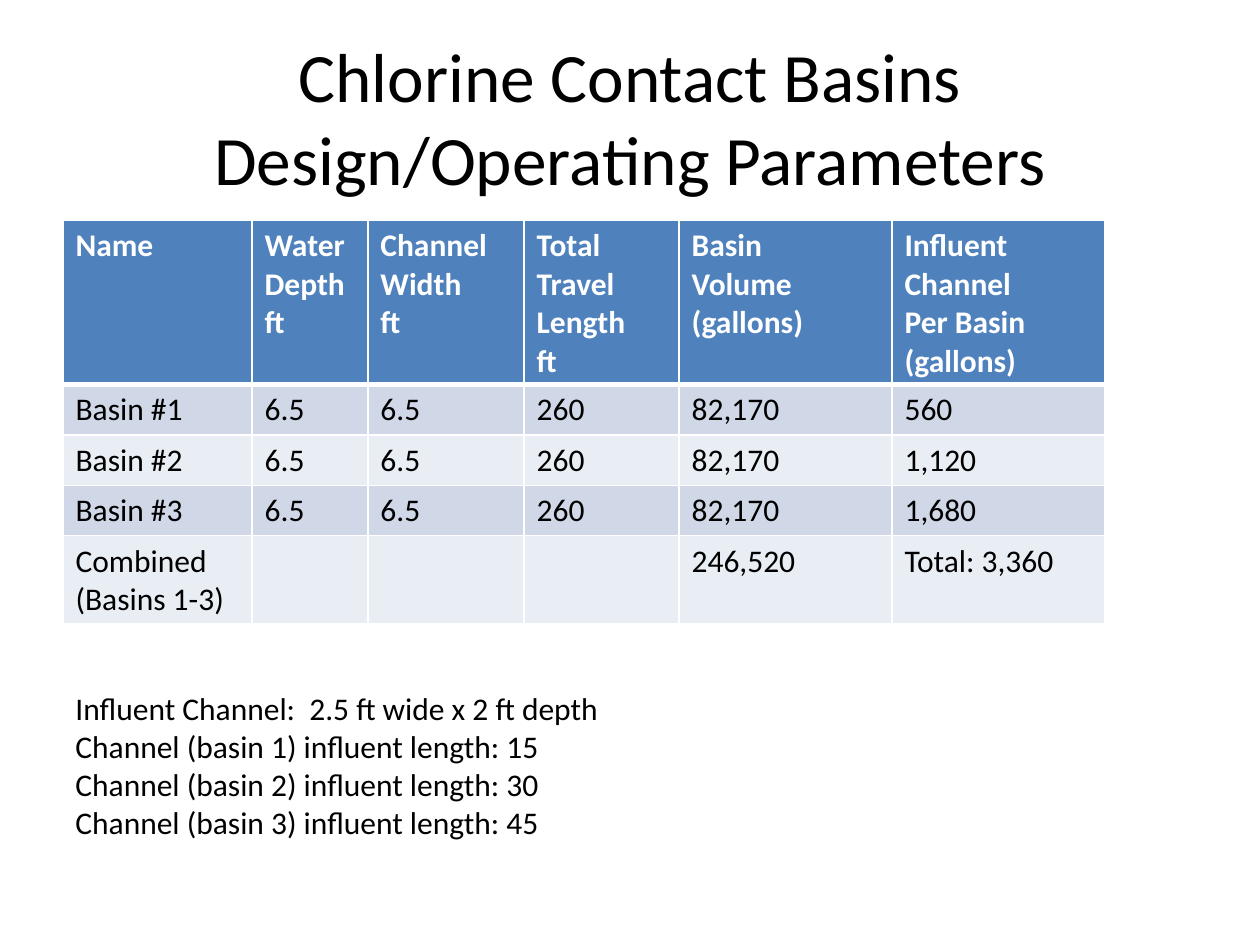
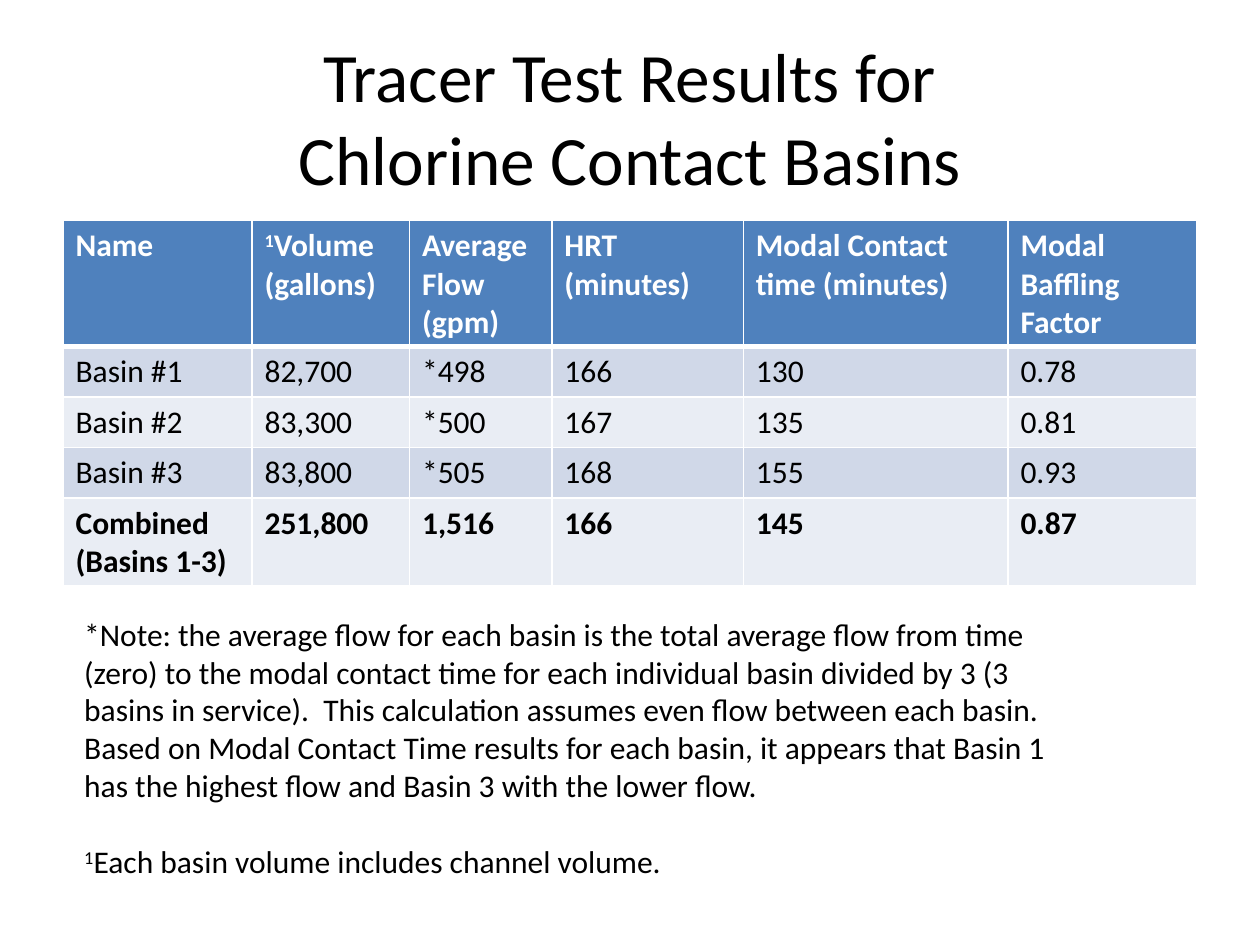
from dataclasses import dataclass

import lxml.etree
import pptx
import pptx.dml.color
import pptx.enum.text
import pptx.oxml.ns
import pptx.util

CELL = pptx.util.Inches(0.25)  # the slide is a grid of square cells
COLS, ROWS = 40, 30


@dataclass(frozen=True)
class Theme:
    font: str = "Calibri"
    title_size: float = 39.6
    body_size: float = 18
    note_gap: float = 22
    ink: str = "000000"
    paper: str = "FFFFFF"
    header: str = "4F81BD"
    bands: tuple = ("D0D8E8", "E9EDF4")
    rule: float = 1
    header_rule: float = 3


THEME = Theme()
TITLE_BOX = (2, 1.2, 36, 5)
TABLE_ORIGIN = (2, 7)
ROW_HEIGHT = 1.6
SUPERSCRIPTS = {"¹": "1"}


def grid(*lengths):
    """Turn grid lengths into slide units."""
    return [int(n * CELL) for n in lengths]


def rgb(value):
    return pptx.dml.color.RGBColor.from_string(value)


def write_paragraph(p, text, size=THEME.body_size, color=THEME.ink, bold=False):
    """Fill one paragraph; a leading superscript mark becomes a raised run."""
    mark = SUPERSCRIPTS.get(text[:1])
    if mark:
        p.text = mark
        p.runs[0].font._element.set("baseline", "30000")
        p.add_run().text = text[1:]
    else:
        p.text = text
    for r in p.runs:
        r.font.name = THEME.font
        r.font.size = pptx.util.Pt(size)
        r.font.bold = bold
        r.font.color.rgb = rgb(color)


def write_lines(tf, text, **style):
    """Write each line of the text as a paragraph."""
    for i, line in enumerate(text.split("\n")):
        p = tf.add_paragraph() if i else tf.paragraphs[0]
        write_paragraph(p, line, **style)


def add_text_frame(slide, box):
    tf = slide.shapes.add_textbox(*grid(*box)).text_frame
    tf.word_wrap = True
    return tf


def add_title(slide, text):
    tf = add_text_frame(slide, TITLE_BOX)
    tf.vertical_anchor = pptx.enum.text.MSO_ANCHOR.MIDDLE
    p = tf.paragraphs[0]
    write_paragraph(p, text, size=THEME.title_size)
    p.alignment = pptx.enum.text.PP_ALIGN.CENTER


def add_notes_box(slide, box, text, gap=0):
    tf = add_text_frame(slide, box)
    tf.auto_size = pptx.enum.text.MSO_AUTO_SIZE.SHAPE_TO_FIT_TEXT
    write_lines(tf, text)
    for p in tf.paragraphs[1:]:
        p.space_before = pptx.util.Pt(gap)


def set_borders(cell, top, bottom):
    tc_pr = cell._tc.get_or_add_tcPr()
    qn = pptx.oxml.ns.qn
    widths = {"L": THEME.rule, "R": THEME.rule, "T": top, "B": bottom}
    for side, width in widths.items():
        ln = lxml.etree.SubElement(tc_pr, qn(f"a:ln{side}"), w=str(pptx.util.Pt(width)))
        fill = lxml.etree.SubElement(ln, qn("a:solidFill"))
        lxml.etree.SubElement(fill, qn("a:srgbClr"), val=THEME.paper)


def add_basin_table(slide, widths, height, rows, bold_total=False):
    """Header row, banded basin rows and a closing row for all basins."""
    size = (sum(widths), ROW_HEIGHT * len(rows))
    frame = slide.shapes.add_table(len(rows), len(widths), *grid(*TABLE_ORIGIN, *size))
    table = frame.table
    for column, width in zip(table.columns, grid(*widths)):
        column.width = width
    for i, row in enumerate(rows):
        is_header, is_total = i == 0, i == len(rows) - 1
        for j, text in enumerate(row):
            cell = table.cell(i, j)
            set_borders(
                cell,
                top=THEME.header_rule if i == 1 else THEME.rule,
                bottom=THEME.header_rule if is_header else THEME.rule,
            )
            cell.fill.solid()
            cell.fill.fore_color.rgb = rgb(THEME.header if is_header else THEME.bands[(i - 1) % 2])
            write_lines(
                cell.text_frame,
                text,
                color=THEME.paper if is_header else THEME.ink,
                bold=is_header or (is_total and bold_total),
            )
    frame.height = grid(height)[0]  # room for the wrapped rows


def new_slide(prs, title):
    slide = prs.slides.add_slide(prs.slide_layouts[6])
    add_title(slide, title)
    return slide


def build_design_slide(prs):
    s = new_slide(prs, "Chlorine Contact Basins\nDesign/Operating Parameters")
    add_notes_box(
        s,
        (2, 21.68, 31.68, 5.24),
        "Influent Channel:  2.5 ft wide x 2 ft depth\n"
        + "\n".join(f"Channel (basin {n}) influent length: {15 * n}" for n in (1, 2, 3)),
    )
    add_basin_table(
        s,
        widths=(6, 3.68, 4.96, 4.92, 6.76, 6.76),
        height=12.88,
        rows=[
            ("Name", "Water\nDepth\nft", "Channel\nWidth\nft", "Total Travel\nLength\nft",
             "Basin\nVolume\n(gallons)", "Influent\nChannel\nPer Basin\n(gallons)"),
            ("Basin #1", "6.5", "6.5", "260", "82,170", "560"),
            ("Basin #2", "6.5", "6.5", "260", "82,170", "1,120"),
            ("Basin #3", "6.5", "6.5", "260", "82,170", "1,680"),
            ("Combined (Basins 1-3)", "", "", "", "246,520", "Total: 3,360"),
        ],
    )


def build_tracer_slide(prs):
    s = new_slide(prs, "Tracer Test Results for\nChlorine Contact Basins")
    add_notes_box(
        s,
        (2.28, 19.32, 31.68, 8.88),
        "*Note: the average flow for each basin is the total average flow from time (zero) "
        "to the modal contact time for each individual basin divided by 3 (3 basins in "
        "service).  This calculation assumes even flow between each basin.  Based on Modal "
        "Contact Time results for each basin, it appears that Basin 1 has the highest flow "
        "and Basin 3 with the lower flow.\n"
        "¹Each basin volume includes channel volume.",
        gap=THEME.note_gap,
    )
    add_basin_table(
        s,
        widths=(6, 5, 4.52, 6.08, 8.4, 6),
        height=11.68,
        bold_total=True,
        rows=[
            ("Name", "¹Volume\n(gallons)", "Average Flow\n(gpm)", "HRT\n(minutes)",
             "Modal Contact time (minutes)", "Modal Baffling Factor"),
            ("Basin #1", "82,700", "*498", "166", "130", "0.78"),
            ("Basin #2", "83,300", "*500", "167", "135", "0.81"),
            ("Basin #3", "83,800", "*505", "168", "155", "0.93"),
            ("Combined (Basins 1-3)", "251,800", "1,516", "166", "145", "0.87"),
        ],
    )


def main():
    prs = pptx.Presentation()
    prs.slide_width, prs.slide_height = grid(COLS, ROWS)
    build_design_slide(prs)
    build_tracer_slide(prs)
    prs.save("out.pptx")


if __name__ == "__main__":
    main()
